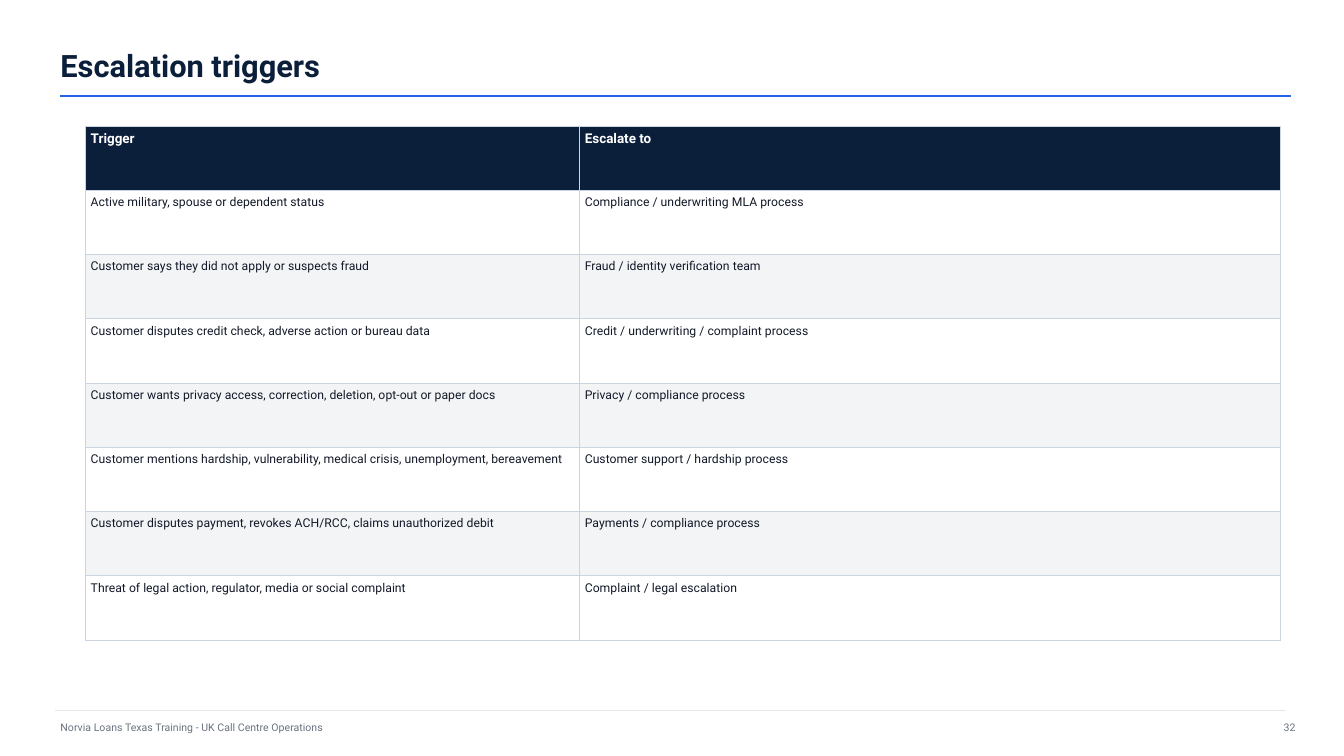
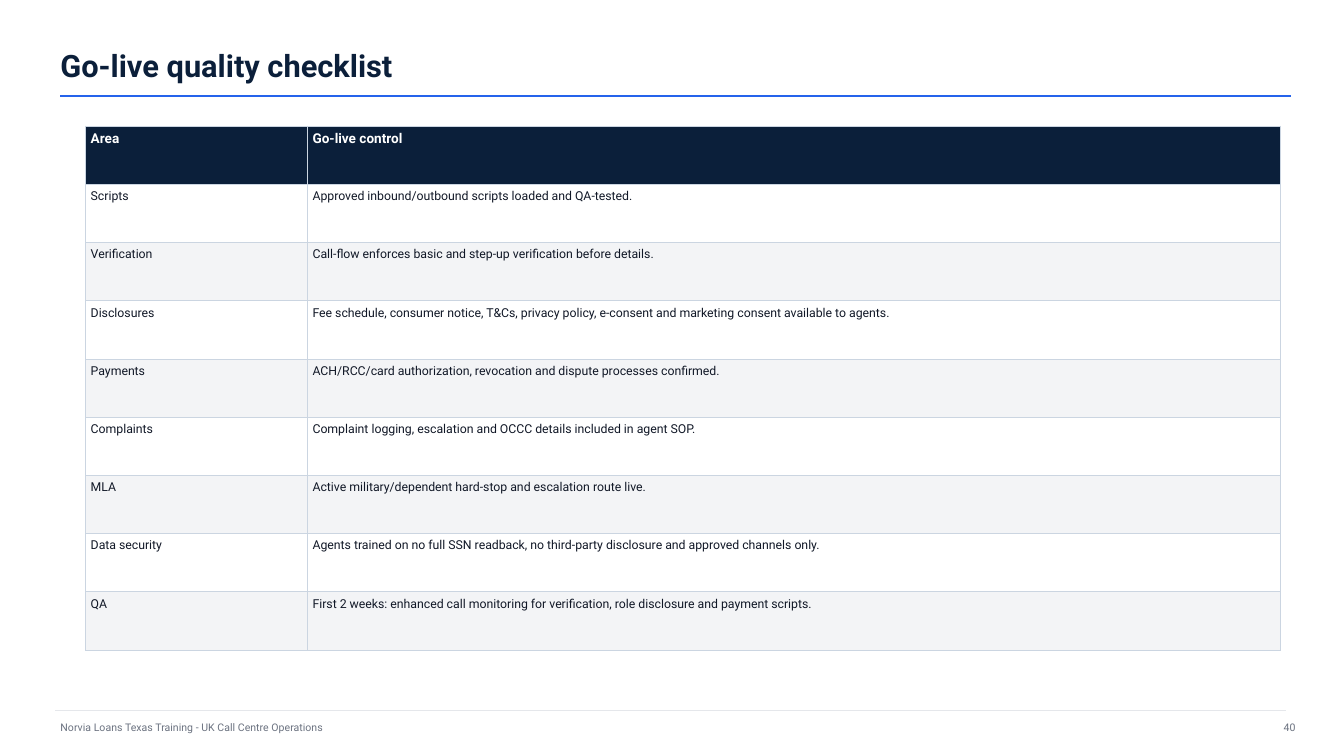
import lxml.etree
import pptx
import pptx.dml.color
import pptx.enum.shapes
import pptx.enum.text
import pptx.oxml.ns
import pptx.util

Inches = pptx.util.Inches
RGBColor = pptx.dml.color.RGBColor
PP_ALIGN = pptx.enum.text.PP_ALIGN
qn = pptx.oxml.ns.qn

# Shared look
FONT = "Roboto"
NAVY = RGBColor(0x0B, 0x1F, 0x3A)
BLUE = RGBColor(0x25, 0x63, 0xEB)
INK = RGBColor(0x11, 0x18, 0x27)
GRAY = RGBColor(0x6B, 0x72, 0x80)
RULE = RGBColor(0xE5, 0xE7, 0xEB)
BORDER = RGBColor(0xCB, 0xD5, 0xE1)
STRIPE = RGBColor(0xF3, 0xF4, 0xF6)
WHITE = RGBColor(0xFF, 0xFF, 0xFF)
FOOTER = "Norvia Loans Texas Training - UK Call Centre Operations"

# Table contents, header row first
TRIGGERS = [
    ("Trigger", "Escalate to"),
    ("Active military, spouse or dependent status",
     "Compliance / underwriting MLA process"),
    ("Customer says they did not apply or suspects fraud",
     "Fraud / identity verification team"),
    ("Customer disputes credit check, adverse action or bureau data",
     "Credit / underwriting / complaint process"),
    ("Customer wants privacy access, correction, deletion, opt-out or paper docs",
     "Privacy / compliance process"),
    ("Customer mentions hardship, vulnerability, medical crisis, unemployment, bereavement",
     "Customer support / hardship process"),
    ("Customer disputes payment, revokes ACH/RCC, claims unauthorized debit",
     "Payments / compliance process"),
    ("Threat of legal action, regulator, media or social complaint",
     "Complaint / legal escalation"),
]
CHECKLIST = [
    ("Area", "Go-live control"),
    ("Scripts", "Approved inbound/outbound scripts loaded and QA-tested."),
    ("Verification",
     "Call-flow enforces basic and step-up verification before details."),
    ("Disclosures",
     "Fee schedule, consumer notice, T&Cs, privacy policy, e-consent and "
     "marketing consent available to agents."),
    ("Payments",
     "ACH/RCC/card authorization, revocation and dispute processes confirmed."),
    ("Complaints",
     "Complaint logging, escalation and OCCC details included in agent SOP."),
    ("MLA", "Active military/dependent hard-stop and escalation route live."),
    ("Data security",
     "Agents trained on no full SSN readback, no third-party disclosure and "
     "approved channels only."),
    ("QA",
     "First 2 weeks: enhanced call monitoring for verification, role "
     "disclosure and payment scripts."),
]


def set_text(tf, text, size, color, bold=False, align=PP_ALIGN.LEFT):
    tf.text = text
    p = tf.paragraphs[0]
    p.alignment = align
    font = p.runs[0].font
    font.name = FONT
    font.size = pptx.util.Centipoints(round(size * 100))
    font.bold = bold
    font.color.rgb = color


def add_text(s, left, top, width, height, text, size, color, **style):
    sp = s.shapes.add_textbox(Inches(left), Inches(top), Inches(width), Inches(height))
    tf = sp.text_frame
    tf.word_wrap = True
    tf.vertical_anchor = pptx.enum.text.MSO_ANCHOR.MIDDLE
    tf.margin_left = tf.margin_right = tf.margin_top = tf.margin_bottom = 0
    set_text(tf, text, size, color, **style)


def add_rule(s, left, top, width, color, weight):
    line = s.shapes.add_connector(
        pptx.enum.shapes.MSO_CONNECTOR.STRAIGHT,
        Inches(left), Inches(top), Inches(left + width), Inches(top))
    line.line.color.rgb = color
    line.line.width = pptx.util.Pt(weight)
    lxml.etree.SubElement(line._element.spPr, qn("a:effectLst"))


def add_borders(cell):
    tc_pr = cell._tc.get_or_add_tcPr()
    for side in ("L", "R", "T", "B"):
        ln = lxml.etree.SubElement(
            tc_pr, qn("a:ln" + side), w=str(pptx.util.Pt(0.5)))
        fill = lxml.etree.SubElement(ln, qn("a:solidFill"))
        lxml.etree.SubElement(fill, qn("a:srgbClr"), val=str(BORDER))


def add_grid(s, rows, col_widths, height, size):
    """Navy header, then white and grey rows of equal height."""
    table = s.shapes.add_table(
        len(rows), len(col_widths), Inches(0.85), Inches(1.25),
        Inches(sum(col_widths)), Inches(height)).table
    table.horz_banding = False
    for col, width in zip(table.columns, col_widths):
        col.width = Inches(width)
    for i, row in enumerate(rows):
        table.rows[i].height = Inches(height / len(rows))
        header = i == 0
        fill = NAVY if header else WHITE if i % 2 else STRIPE
        for j, text in enumerate(row):
            cell = table.cell(i, j)
            cell.margin_left = cell.margin_right = Inches(0.05)
            cell.margin_top = cell.margin_bottom = Inches(0.05)
            add_borders(cell)
            cell.fill.solid()
            cell.fill.fore_color.rgb = fill
            set_text(cell.text_frame, text, size + 0.9 if header else size,
                     WHITE if header else INK, bold=header)


def add_slide(prs, title, number):
    s = prs.slides.add_slide(prs.slide_layouts[6])
    s.background.fill.solid()
    s.background.fill.fore_color.rgb = WHITE
    # Title
    add_text(s, 0.6, 0.42, 12, 0.45, title, 22, NAVY, bold=True)
    add_rule(s, 0.6, 0.95, 12.2, BLUE, 1.2)
    # Footer
    add_rule(s, 0.55, 7.05, 12.2, RULE, 0.75)
    add_text(s, 0.6, 7.12, 7.5, 0.2, FOOTER, 7.5, GRAY)
    add_text(s, 12.25, 7.12, 0.6, 0.2, str(number), 7.5, GRAY, align=PP_ALIGN.RIGHT)
    return s


def main():
    prs = pptx.Presentation()
    prs.slide_width = Inches(13.33)
    prs.slide_height = Inches(7.5)

    s = add_slide(prs, "Escalation triggers", 32)
    add_grid(s, TRIGGERS, (4.9, 6.95), 5.1, 8.7)

    s = add_slide(prs, "Go-live quality checklist", 40)
    add_grid(s, CHECKLIST, (2.2, 9.65), 5.2, 8.8)

    prs.save("out.pptx")


if __name__ == "__main__":
    main()
